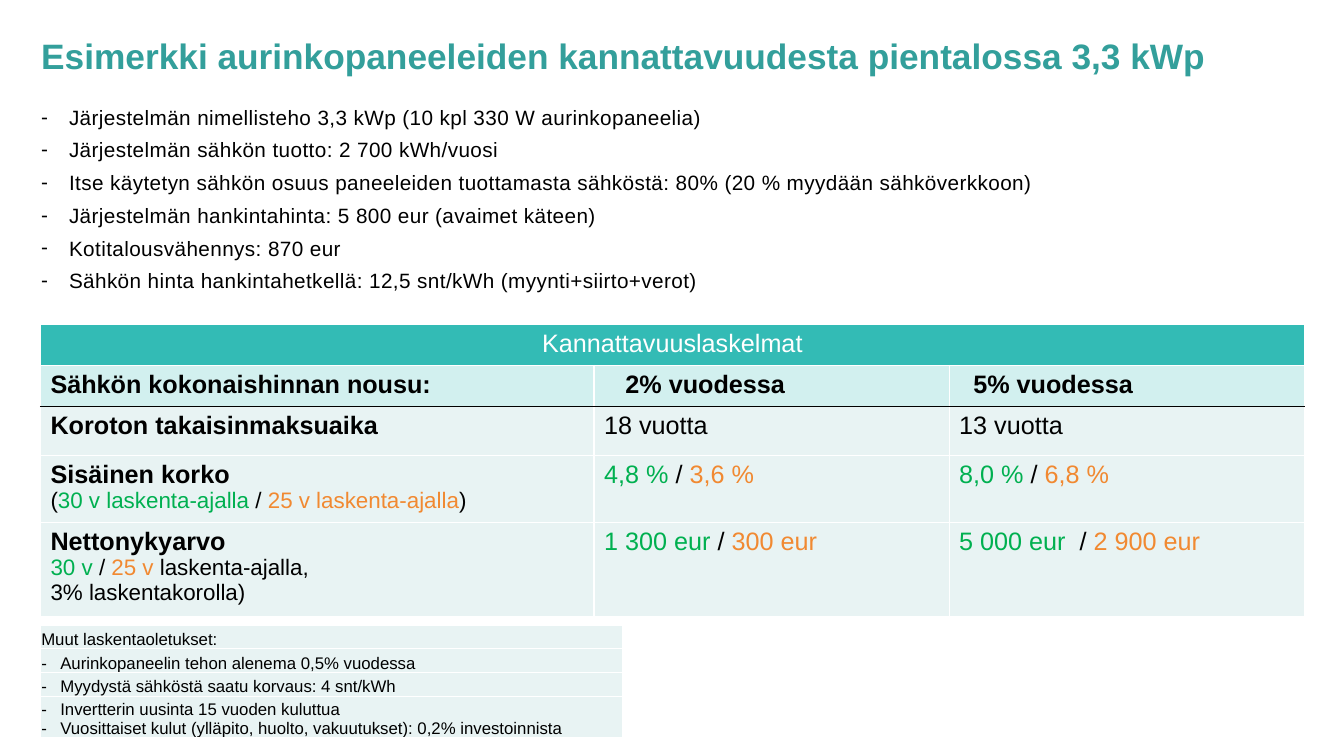
from lxml.etree import SubElement
from pptx import Presentation
from pptx.dml.color import RGBColor
from pptx.enum.text import MSO_ANCHOR, PP_ALIGN
from pptx.oxml.ns import qn
from pptx.util import Cm, Pt

FONT = "Arial"
BLACK, WHITE, GREEN, ORANGE = "000000", "FFFFFF", "00B050", "F18931"
TITLE, HEADER, SUBHEADER, PALE = "339F9B", "33BBB5", "D2F0EF", "E8F3F3"

HEADING = "Esimerkki aurinkopaneeleiden kannattavuudesta pientalossa 3,3 kWp"
FACTS = [
    "Järjestelmän nimellisteho 3,3 kWp (10 kpl 330 W aurinkopaneelia)",
    "Järjestelmän sähkön tuotto: 2 700 kWh/vuosi",
    "Itse käytetyn sähkön osuus paneeleiden tuottamasta sähköstä: 80% (20 % myydään sähköverkkoon)",
    "Järjestelmän hankintahinta: 5 800 eur (avaimet käteen)",
    "Kotitalousvähennys: 870 eur",
    "Sähkön hinta hankintahetkellä: 12,5 snt/kWh (myynti+siirto+verot)",
]
ASSUMPTIONS = [
    ["Aurinkopaneelin tehon alenema 0,5% vuodessa"],
    ["Myydystä sähköstä saatu korvaus: 4 snt/kWh"],
    ["Invertterin uusinta 15 vuoden kuluttua",
     "Vuosittaiset kulut (ylläpito, huolto, vakuutukset): 0,2% investoinnista"],
]


def rgb(color):
    """Return the colour for a hex string."""
    return RGBColor.from_string(color)


def add_run(p, text, size, color=BLACK, bold=False):
    """Append a formatted run to a paragraph and return it."""
    r = p.add_run()
    r.text = text
    r.font.name, r.font.size, r.font.bold = FONT, Pt(size), bold
    r.font.color.rgb = rgb(color)
    return r


def add_dash(p, indent):
    """Give a paragraph a hanging dash bullet."""
    pPr = p._p.get_or_add_pPr()
    pPr.set("marL", str(indent))
    pPr.set("indent", str(-indent))
    SubElement(pPr, qn("a:buFont"), typeface=FONT)
    SubElement(pPr, qn("a:buChar"), char="-")


def add_text_frame(s, box):
    """Add a wrapping text box and return its text frame."""
    tf = s.shapes.add_textbox(*box).text_frame
    tf.word_wrap = True
    return tf


def add_title(s, box):
    """Place the slide heading in its box."""
    p = add_text_frame(s, box).paragraphs[0]
    p.line_spacing = Pt(43)
    add_run(p, HEADING, 25.2, TITLE, True)


def add_facts(s, box):
    """Place the bulleted system facts in their box."""
    tf = add_text_frame(s, box)
    for i, fact in enumerate(FACTS):
        p = tf.add_paragraph() if i else tf.paragraphs[0]
        if i:
            p.space_before = Pt(5.6)
        add_dash(p, Cm(0.7))
        add_run(p, fact, 14.8)._r.get_or_add_rPr().set("spc", "30")


def style_cell(cell, fill, top=WHITE, bottom=WHITE):
    """Draw thin borders around a cell and fill it."""
    tcPr = cell._tc.get_or_add_tcPr()
    for side, color in (("L", WHITE), ("R", WHITE), ("T", top), ("B", bottom)):
        ln = SubElement(tcPr, qn(f"a:ln{side}"), w=str(Pt(1)))
        SubElement(SubElement(ln, qn("a:solidFill")), qn("a:srgbClr"), val=color)
    cell.fill.solid()
    cell.fill.fore_color.rgb = rgb(fill)


def add_grid(s, left, top, widths, heights):
    """Add a table with the given column widths and row heights."""
    table = s.shapes.add_table(len(heights), len(widths), left, top,
                               sum(widths), sum(heights)).table
    for col, width in zip(table.columns, widths):
        col.width = width
    for row, height in zip(table.rows, heights):
        row.height = height
    return table


def add_pair(cell, first, second):
    """Write the 30-year and 25-year values of a cell."""
    p = cell.text_frame.paragraphs[0]
    for text, color in ((first, GREEN), ("/ ", BLACK), (second, ORANGE)):
        add_run(p, text, 18, color)


def add_label(cell, name, lines=()):
    """Write a bold row name with smaller explanatory lines of coloured runs."""
    p = cell.text_frame.paragraphs[0]
    add_run(p, name, 18, BLACK, True)
    for line in lines:
        p.add_line_break()
        for text, color in line:
            add_run(p, text, 16, color)


def add_results(s, left, top, width):
    """Place the profitability table."""
    side = Cm(8.95)
    heights = [Cm(h) for h in (1.03, 1.03, 1.23, 1.59, 2.22)]
    table = add_grid(s, left, top, [width - 2 * side, side, side], heights)
    for i, fill in enumerate((HEADER, SUBHEADER, PALE, PALE, PALE)):
        for j in range(3):
            style_cell(table.cell(i, j), fill, BLACK if i == 2 else WHITE,
                       BLACK if i == 1 else WHITE)

    table.cell(0, 0).merge(table.cell(0, 2))
    p = table.cell(0, 0).text_frame.paragraphs[0]
    p.alignment = PP_ALIGN.CENTER
    add_run(p, "Kannattavuuslaskelmat", 18, WHITE)

    add_label(table.cell(1, 0), "Sähkön kokonaishinnan nousu:")
    for j, text, margin in ((1, "2% vuodessa", 0.79), (2, "5% vuodessa", 0.61)):
        table.cell(1, j).margin_left = Cm(margin)
        add_label(table.cell(1, j), text)

    add_label(table.cell(2, 0), "Koroton takaisinmaksuaika")
    for j, text in ((1, "18 vuotta"), (2, "13 vuotta")):
        add_run(table.cell(2, j).text_frame.paragraphs[0], text, 18)

    add_label(table.cell(3, 0), "Sisäinen korko", [
        [("(", BLACK), ("30 v laskenta-ajalla ", GREEN), ("/ ", BLACK),
         ("25 v laskenta-ajalla", ORANGE), (")", BLACK)]])
    add_pair(table.cell(3, 1), "4,8 % ", "3,6 %")
    add_pair(table.cell(3, 2), "8,0 % ", "6,8 %")

    add_label(table.cell(4, 0), "Nettonykyarvo", [
        [("30 v ", GREEN), ("/ ", BLACK), ("25 v ", ORANGE), ("laskenta-ajalla,", BLACK)],
        [("3% laskentakorolla)", BLACK)]])
    add_pair(table.cell(4, 1), "1 300 eur ", "300 eur")
    add_pair(table.cell(4, 2), "5 000 eur  ", "2 900 eur")


def add_assumptions(s, left, top, width):
    """Place the small table of other assumptions."""
    rows = [["Muut laskentaoletukset:"]] + ASSUMPTIONS
    heights = [Cm(0.6)] * 3 + [Cm(0.98)]
    table = add_grid(s, left, top, [width], heights)
    for i, lines in enumerate(rows):
        cell = table.cell(i, 0)
        cell.margin_left = cell.margin_right = cell.margin_top = Cm(0.02)
        cell.margin_bottom = 0
        cell.vertical_anchor = MSO_ANCHOR.BOTTOM
        style_cell(cell, PALE)
        for k, line in enumerate(lines):
            p = cell.text_frame.add_paragraph() if k else cell.text_frame.paragraphs[0]
            if i:
                add_dash(p, Cm(0.48))
            add_run(p, line, 12)


def main():
    """Build the slide and save it."""
    prs = Presentation()
    prs.slide_width, prs.slide_height = Cm(33.87), Cm(19.05)
    s = prs.slides.add_slide(prs.slide_layouts[6])
    left = Cm(1.02)
    add_title(s, (Cm(0.79), Cm(0.3), Cm(31.83), Cm(2.21)))
    add_facts(s, (Cm(0.79), Cm(2.51), Cm(26.8), Cm(5.69)))
    add_assumptions(s, left, Cm(15.75), Cm(14.68))
    add_results(s, left, Cm(8.18), Cm(31.85))
    prs.save("out.pptx")


if __name__ == "__main__":
    main()
